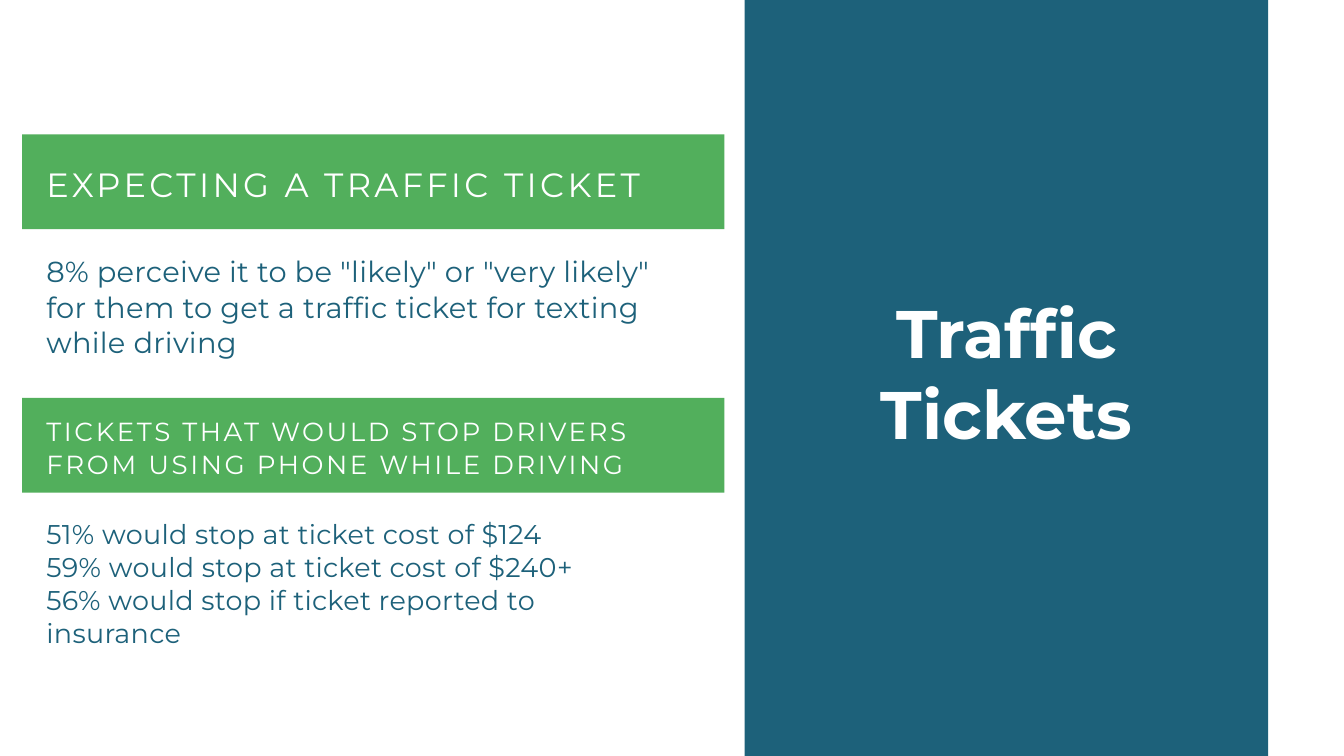
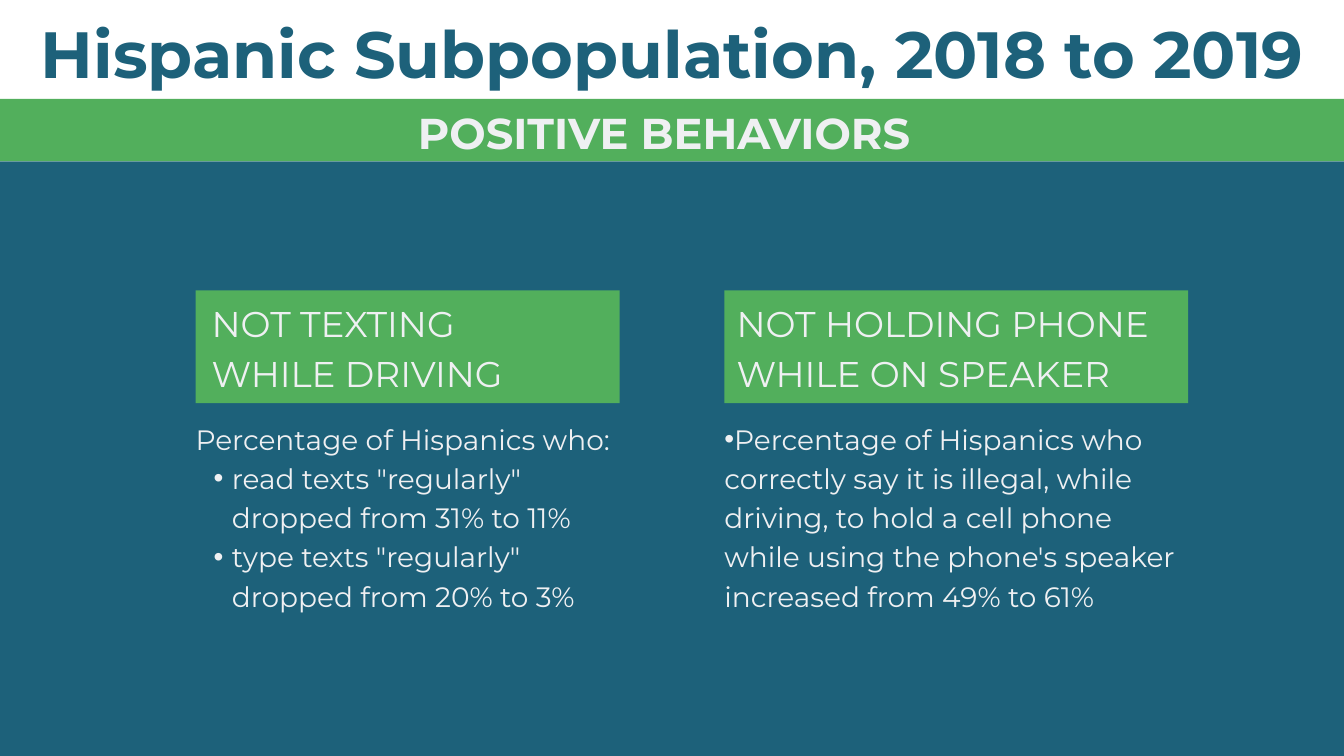
from lxml import etree
from pptx import Presentation
from pptx.dml.color import RGBColor
from pptx.enum import shapes, text
from pptx.oxml import ns
from pptx.util import Inches, Pt

TEAL = RGBColor(0x1D, 0x61, 0x7A)
GREEN = RGBColor(0x52, 0xAF, 0x5C)
WHITE = RGBColor(0xFF, 0xFF, 0xFF)
PALE = RGBColor(0xEF, 0xF0, 0xF2)
FONT = "Montserrat"
WIDTH, HEIGHT = 20, 11.25


def add_band(s, x, y, w, h, color):
    sp = s.shapes.add_shape(shapes.MSO_SHAPE.RECTANGLE,
                            Inches(x), Inches(y), Inches(w), Inches(h))
    sp.shadow.inherit = False
    sp.fill.solid()
    sp.fill.fore_color.rgb = color
    sp.line.fill.background()


def set_bullet(p, margin, hanging):
    """Give a paragraph a round bullet; lengths in inches."""
    pPr = p._p.get_or_add_pPr()
    pPr.set("marL", str(Inches(margin)))
    pPr.set("indent", str(-Inches(hanging)))
    etree.SubElement(pPr, ns.qn("a:buFont"), typeface="Arial")
    etree.SubElement(pPr, ns.qn("a:buChar"), char="•")


def add_text(s, x, y, w, h, lines, *, size, leading, color, bold=False,
             center=False, tracking=0, bullets=(), margin=0, hanging=0):
    """Add one paragraph per line; bullets lists the indexes of bulleted lines."""
    tf = s.shapes.add_textbox(Inches(x), Inches(y), Inches(w), Inches(h)).text_frame
    tf.word_wrap = True
    tf.margin_left = tf.margin_right = tf.margin_top = tf.margin_bottom = 0
    for i, line in enumerate(lines):
        p = tf.paragraphs[0] if i == 0 else tf.add_paragraph()
        p.line_spacing = Pt(leading)
        p.alignment = text.PP_ALIGN.CENTER if center else text.PP_ALIGN.LEFT
        if i in bullets:
            set_bullet(p, margin, hanging)
        r = p.add_run()
        r.text = line
        r.font.name = FONT
        r.font.size = Pt(size)
        r.font.bold = bold
        r.font.color.rgb = color
        if tracking:
            r._r.get_or_add_rPr().set("spc", str(round(tracking * 100)))


def add_ticket_section(s, y, heading, heading_y, heading_size, leading,
                       body, body_size, body_leading):
    """Green heading bar with teal text below it."""
    add_band(s, 0.33, y, 10.45, 1.41, GREEN)
    add_text(s, 0.69, heading_y, 9.72, 0.95, [heading], size=heading_size,
             leading=leading, color=WHITE, tracking=heading_size / 10)
    add_text(s, 0.69, y + 1.77, 9.37, 1.5, body, size=body_size,
             leading=body_leading, color=TEAL, tracking=0.3)


def add_behavior(s, x, w, heading, heading_x, heading_w, body, **bullet_format):
    """Green heading box with pale text below it."""
    add_band(s, x, 4.32, w, 1.68, GREEN)
    add_text(s, heading_x, 4.38, heading_w, 1.5, heading,
             size=38.3, leading=53.7, color=PALE)
    add_text(s, x, 6.2, w, 2.91, body, size=30, leading=42, color=PALE,
             **bullet_format)


def add_tickets_slide(s):
    add_ticket_section(
        s, 2, "EXPECTING A TRAFFIC TICKET", 2.34, 36, 50.4,
        ['8% perceive it to be "likely" or "very likely" for them to get '
         'a traffic ticket for texting while driving'], 31, 37.8)
    add_ticket_section(
        s, 5.92, "TICKETS THAT WOULD STOP DRIVERS FROM USING PHONE WHILE DRIVING",
        6.15, 28, 35.8,
        ["51% would stop at ticket cost of $124",
         "59% would stop at ticket cost of $240+",
         "56% would stop if ticket reported to insurance"], 29, 35.4)
    add_band(s, 11.08, 0, 7.79, HEIGHT, TEAL)
    add_text(s, 11.75, 4.34, 6.46, 2.4, ["Traffic Tickets"], size=72,
             leading=86.4, color=WHITE, bold=True, center=True)


def add_behaviors_slide(s):
    add_band(s, 0, 2.4, WIDTH, HEIGHT - 2.4, TEAL)
    add_text(s, 0.57, 0.2, 18.86, 1.18, ["Hispanic Subpopulation, 2018 to 2019"],
             size=70, leading=84, color=TEAL, bold=True, center=True)
    add_band(s, 0, 1.47, WIDTH, 0.93, GREEN)
    add_text(s, 1.72, 1.45, 16.32, 0.86, ["POSITIVE BEHAVIORS"], size=46.2,
             leading=64.6, color=PALE, bold=True, center=True)
    add_behavior(
        s, 2.91, 6.31, ["NOT TEXTING", "WHILE DRIVING"], 3.15, 4.85,
        ["Percentage of Hispanics who:",
         'read texts "regularly" dropped from 31% to 11%',
         'type texts "regularly" dropped from 20% to 3%'],
        bullets=(1, 2), margin=0.54, hanging=0.27)
    add_behavior(
        s, 10.78, 6.9, ["NOT HOLDING PHONE", "WHILE ON SPEAKER"], 10.96, 6.55,
        ["Percentage of Hispanics who correctly say it is illegal, while "
         "driving, to hold a cell phone",
         "while using the phone's speaker increased from 49% to 61%"],
        bullets=(0,))


def main():
    prs = Presentation()
    prs.slide_width, prs.slide_height = Inches(WIDTH), Inches(HEIGHT)
    for build in (add_tickets_slide, add_behaviors_slide):
        build(prs.slides.add_slide(prs.slide_layouts[6]))
    prs.save("out.pptx")


if __name__ == "__main__":
    main()
